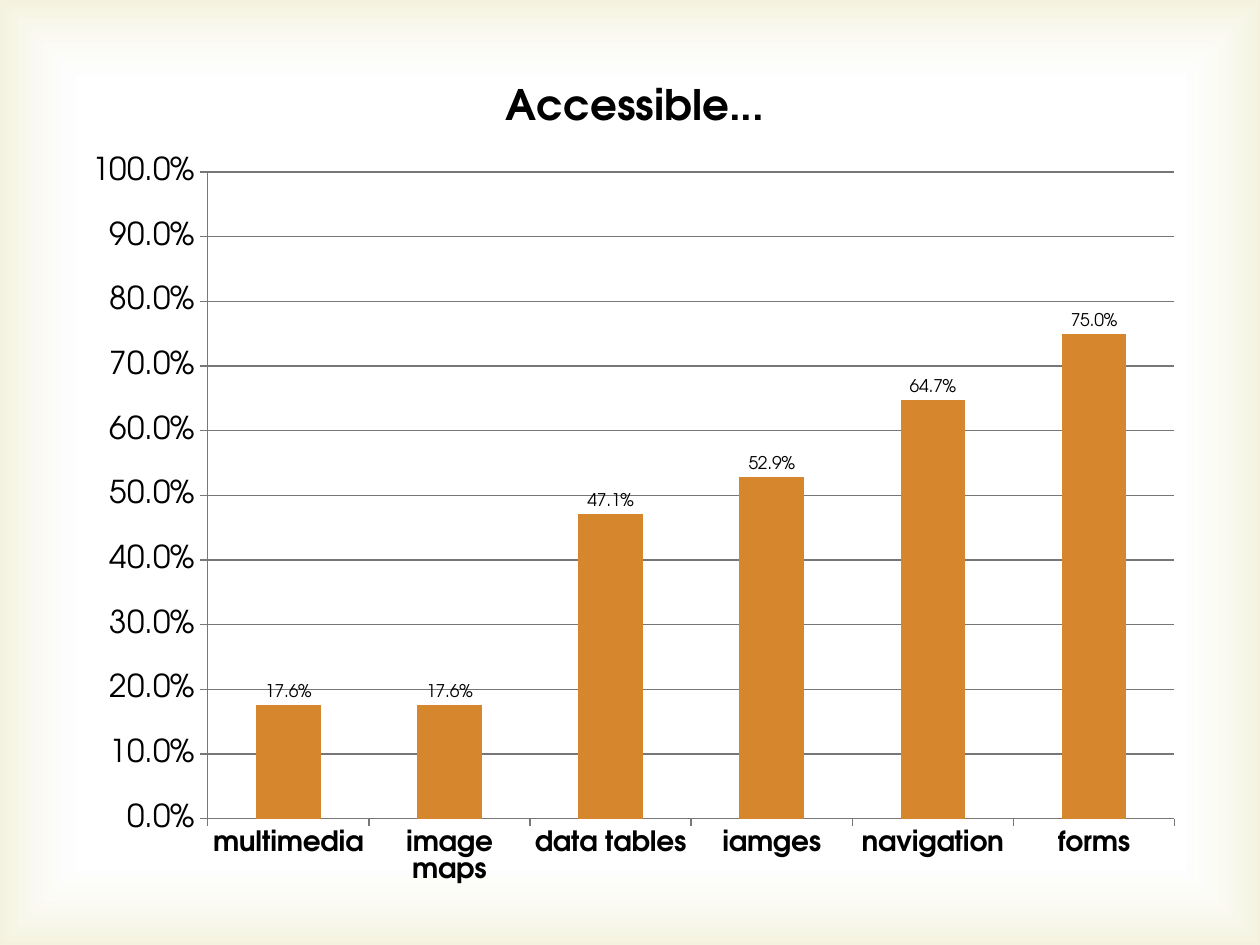
"""Build a slide with a column chart of accessible content types."""
from pptx import Presentation
from pptx.chart.data import CategoryChartData
from pptx.dml.color import RGBColor
from pptx.enum.chart import XL_CHART_TYPE, XL_LABEL_POSITION, XL_TICK_MARK
from pptx.enum.shapes import MSO_SHAPE
from pptx.oxml import parse_xml
from pptx.oxml.ns import nsdecls, qn
from pptx.util import Cm, Pt

COLUMNS = XL_CHART_TYPE.COLUMN_CLUSTERED
LABEL_ABOVE = XL_LABEL_POSITION.OUTSIDE_END
TICK_OUTSIDE = XL_TICK_MARK.OUTSIDE
TICK_NONE = XL_TICK_MARK.NONE
RECTANGLE = MSO_SHAPE.RECTANGLE

COLORS = {"text": "000000", "bar": "D6862D", "axis": "777777",
          "center": "FFFFFF", "edge": "D1CA75"}
FONT = "TeX Gyre Adventor"
PERCENT = "0.0%"
SHARES = {"multimedia": 0.176, "image maps": 0.176, "data tables": 0.471,
          "iamges": 0.529, "navigation": 0.647, "forms": 0.75}


def style_font(font, size=10, bold=False, color="text"):
    """Set typeface, size, weight and colour of a font."""
    font.name = FONT
    font.size = Pt(size)
    font.bold = bold
    font.color.rgb = RGBColor.from_string(COLORS[color])


def write_text(para, text, **style):
    """Add a formatted span of text to a paragraph."""
    span = para.add_run()
    span.text = text
    style_font(span.font, **style)


def style_line(line):
    """Give an axis or gridline its thin grey stroke."""
    line.color.rgb = RGBColor.from_string(COLORS["axis"])
    line.width = Pt(0.75)


def add_frame(page, left, top, width, height):
    """Draw the soft rectangular glow that fades towards the middle."""
    frame = page.shapes.add_shape(RECTANGLE, left, top, width, height)
    frame.shadow.inherit = False
    frame.line.fill.background()
    frame.fill.gradient()
    stops = "".join(
        f'<a:gs pos="{position}000"><a:srgbClr val="{COLORS[name]}">'
        f'<a:alpha val="{alpha}000"/></a:srgbClr></a:gs>'
        for position, name, alpha in ((83, "center", 11), (100, "edge", 23)))
    glow = parse_xml(
        f'<a:gradFill {nsdecls("a")} rotWithShape="1"><a:gsLst>{stops}</a:gsLst>'
        '<a:path path="rect"><a:fillToRect l="50000" t="50000" r="50000" b="50000"/>'
        '</a:path></a:gradFill>')
    properties = frame._element.spPr
    properties.replace(properties.find(qn("a:gradFill")), glow)


def place_plot(chart, **box):
    """Fix the inner plot area as fractions of the chart box."""
    values = "".join(f'<c:{key} val="{value}"/>' for key, value in box.items())
    layout = parse_xml(
        f'<c:layout {nsdecls("c")}><c:manualLayout><c:layoutTarget val="inner"/>'
        f'<c:xMode val="edge"/><c:yMode val="edge"/>{values}'
        '</c:manualLayout></c:layout>')
    area = chart._chartSpace.chart.plotArea
    for old in area.findall(qn("c:layout")):
        area.remove(old)
    area.insert(0, layout)


def style_axes(chart):
    """Format the category axis and the percentage axis."""
    categories, values = chart.category_axis, chart.value_axis
    for axis, size, bold in ((categories, 16, True), (values, 18, False)):
        axis.major_tick_mark = TICK_OUTSIDE
        axis.minor_tick_mark = TICK_NONE
        style_line(axis.format.line)
        style_font(axis.tick_labels.font, size=size, bold=bold)
    values.minimum_scale, values.maximum_scale, values.major_unit = 0, 1, 0.1
    values.has_major_gridlines = True
    style_line(values.major_gridlines.format.line)
    values.tick_labels.number_format = PERCENT
    values.tick_labels.number_format_is_linked = False


def style_columns(plot):
    """Format the columns and the values above them."""
    plot.gap_width = 150
    plot.vary_by_categories = False
    fill = plot.series[0].format.fill
    fill.solid()
    fill.fore_color.rgb = RGBColor.from_string(COLORS["bar"])
    plot.has_data_labels = True
    labels = plot.data_labels
    labels.show_value = True
    labels.position = LABEL_ABOVE
    labels.number_format = PERCENT
    labels.number_format_is_linked = False
    style_font(labels.font)


def add_share_chart(page, left, top, width, height):
    """Place the titled column chart in the given box."""
    data = CategoryChartData(number_format=PERCENT)
    data.categories = list(SHARES)
    data.add_series("Series 1", list(SHARES.values()))
    chart = page.shapes.add_chart(COLUMNS, left, top, width, height, data).chart
    style_font(chart.font)
    chart.has_legend = False
    chart.has_title = True
    write_text(chart.chart_title.text_frame.paragraphs[0], "Accessible...",
               size=24, bold=True)
    chart.chart_title.include_in_layout = False
    place_plot(chart, x=0.12, y=0.14, w=0.86, h=0.76)
    style_axes(chart)
    style_columns(chart.plots[0])


def main():
    """Build and save the deck."""
    deck = Presentation()
    deck.slide_width, deck.slide_height = Cm(25.4), Cm(19.05)
    page = deck.slides.add_slide(deck.slide_layouts[6])
    add_frame(page, 0, 0, deck.slide_width, deck.slide_height)
    add_share_chart(page, Cm(1.47), Cm(1.07), Cm(22.66), Cm(17.15))
    deck.save("out.pptx")


if __name__ == "__main__":
    main()
